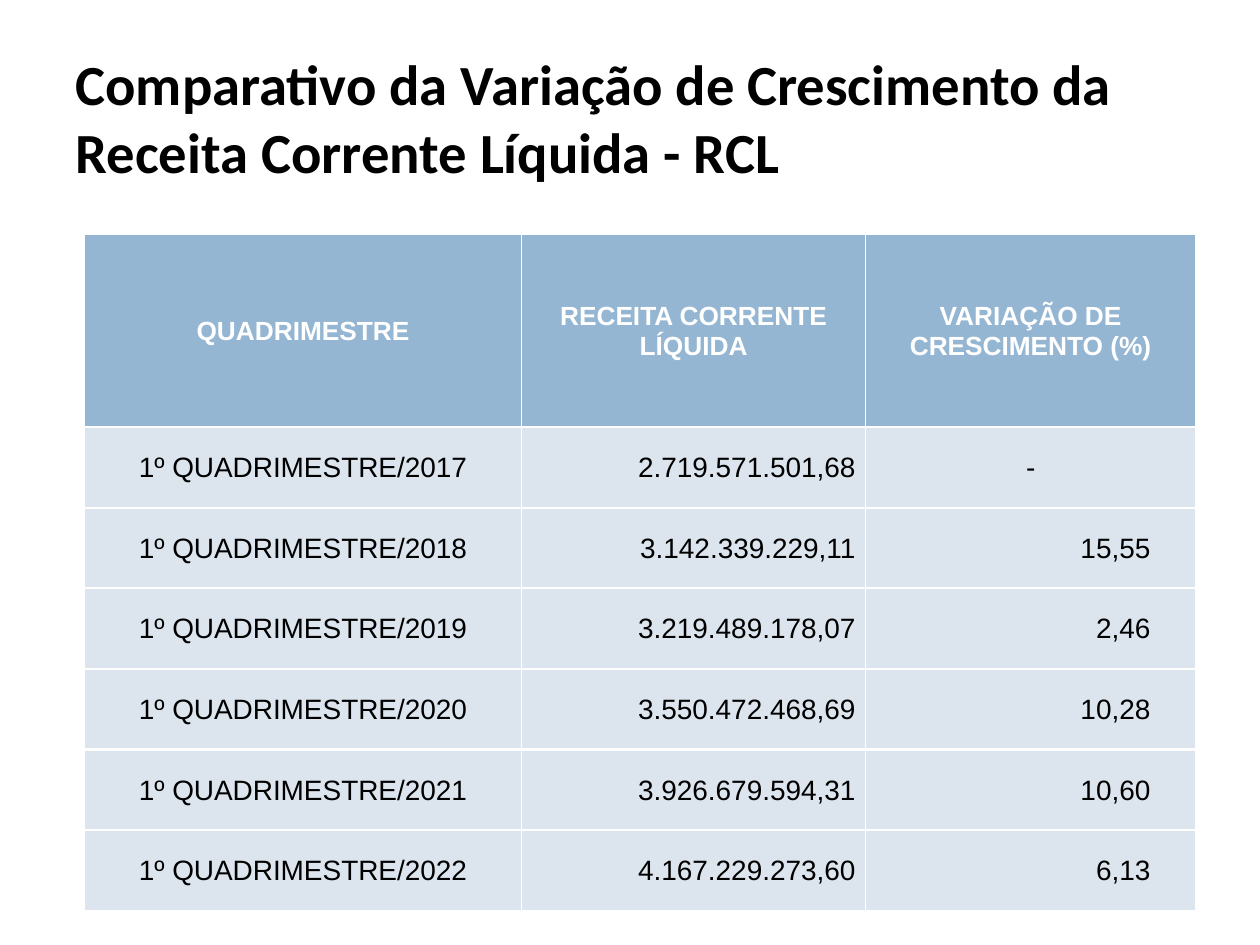
from dataclasses import dataclass

import lxml.etree
import pptx
import pptx.dml.color
import pptx.enum.text
import pptx.oxml.ns
import pptx.table
import pptx.util

Inches = pptx.util.Inches
Pt = pptx.util.Pt
Align = pptx.enum.text.PP_ALIGN
Anchor = pptx.enum.text.MSO_ANCHOR
qn = pptx.oxml.ns.qn

COLORS = {
    "text": "000000",
    "header_text": "FFFFFF",
    "header_fill": "94B6D2",
    "body_fill": "DCE5EE",
    "border": "FFFFFF",
}
HEADER_HEIGHT = 1.53
ROW_HEIGHT = 0.64


@dataclass
class Column:
    heading: str
    width: float
    align: Align
    right_inset: float


@dataclass
class RowStyle:
    fill: str
    color: str
    size: float
    bold: bool
    top: float
    bottom: float


COLUMNS = [
    Column("QUADRIMESTRE", 3.47, Align.CENTER, 0.01),
    Column("RECEITA CORRENTE LÍQUIDA", 2.73, Align.RIGHT, 0.08),
    Column("VARIAÇÃO DE CRESCIMENTO (%)", 2.62, Align.RIGHT, 0.36),
]
RESULTS = [
    (2017, "2.719.571.501,68", "-"),
    (2018, "3.142.339.229,11", "15,55"),
    (2019, "3.219.489.178,07", "2,46"),
    (2020, "3.550.472.468,69", "10,28"),
    (2021, "3.926.679.594,31", "10,60"),
    (2022, "4.167.229.273,60", "6,13"),
]
HEADER = RowStyle("header_fill", "header_text", 15, True, 1, 1.5)
BODY = RowStyle("body_fill", "text", 16, False, 1.5, 1.5)
LAST = RowStyle("body_fill", "text", 16, False, 1.5, 1)


def rgb(name: str) -> pptx.dml.color.RGBColor:
    return pptx.dml.color.RGBColor.from_string(COLORS[name])


def add_run(paragraph, text: str, font: str, size: float, color: str, bold: bool) -> None:
    run = paragraph.add_run()
    run.text = text
    run.font.name = font
    run.font.size = Pt(size)
    run.font.bold = bold
    run.font.color.rgb = rgb(color)


def set_borders(cell: pptx.table._Cell, top: float, bottom: float) -> None:
    properties = cell._tc.get_or_add_tcPr()
    widths = {"a:lnL": 1, "a:lnR": 1, "a:lnT": top, "a:lnB": bottom}
    for position, (tag, width) in enumerate(widths.items()):
        line = lxml.etree.Element(qn(tag), w=str(Pt(width)))
        fill = lxml.etree.SubElement(line, qn("a:solidFill"))
        lxml.etree.SubElement(fill, qn("a:srgbClr"), val=COLORS["border"])
        properties.insert(position, line)


def fill_cell(cell: pptx.table._Cell, text: str, style: RowStyle,
              align: Align, right_inset: float) -> None:
    cell.fill.solid()
    cell.fill.fore_color.rgb = rgb(style.fill)
    cell.vertical_anchor = Anchor.MIDDLE
    cell.margin_left = cell.margin_top = Inches(0.01)
    cell.margin_right = Inches(right_inset)
    cell.margin_bottom = 0
    paragraph = cell.text_frame.paragraphs[0]
    paragraph.alignment = align
    add_run(paragraph, text, "Arial", style.size, style.color, style.bold)
    set_borders(cell, style.top, style.bottom)


def add_title(slide) -> None:
    title = slide.shapes.title
    title.left, title.top = Inches(0.5), Inches(0.3)
    title.width, title.height = Inches(9), Inches(1.25)
    frame = title.text_frame
    frame.word_wrap = True
    frame.auto_size = pptx.enum.text.MSO_AUTO_SIZE.NONE
    frame.vertical_anchor = Anchor.MIDDLE
    paragraph = frame.paragraphs[0]
    paragraph.alignment = Align.LEFT
    add_run(paragraph,
            "Comparativo da Variação de Crescimento da Receita Corrente Líquida - RCL",
            "Calibri", 32.4, "text", True)


def add_revenue_table(slide) -> None:
    width = sum(column.width for column in COLUMNS)
    height = HEADER_HEIGHT + ROW_HEIGHT * len(RESULTS)
    table = slide.shapes.add_table(
        len(RESULTS) + 1, len(COLUMNS),
        Inches(0.67), Inches(1.86), Inches(width), Inches(height)).table
    table.rows[0].height = Inches(HEADER_HEIGHT)
    for index, column in enumerate(COLUMNS):
        table.columns[index].width = Inches(column.width)
        fill_cell(table.cell(0, index), column.heading, HEADER, Align.CENTER, 0.01)

    for row, (year, revenue, growth) in enumerate(RESULTS, start=1):
        table.rows[row].height = Inches(ROW_HEIGHT)
        style = LAST if row == len(RESULTS) else BODY
        values = (f"1º QUADRIMESTRE/{year}", revenue, growth)
        for index, (column, value) in enumerate(zip(COLUMNS, values)):
            align, inset = column.align, column.right_inset
            if value == "-":
                align, inset = Align.CENTER, 0.01
            fill_cell(table.cell(row, index), value, style, align, inset)


def main() -> None:
    presentation = pptx.Presentation()
    presentation.slide_width = Inches(10)
    presentation.slide_height = Inches(7.5)
    slide = presentation.slides.add_slide(presentation.slide_layouts[5])
    add_title(slide)
    add_revenue_table(slide)
    presentation.save("out.pptx")


if __name__ == "__main__":
    main()
